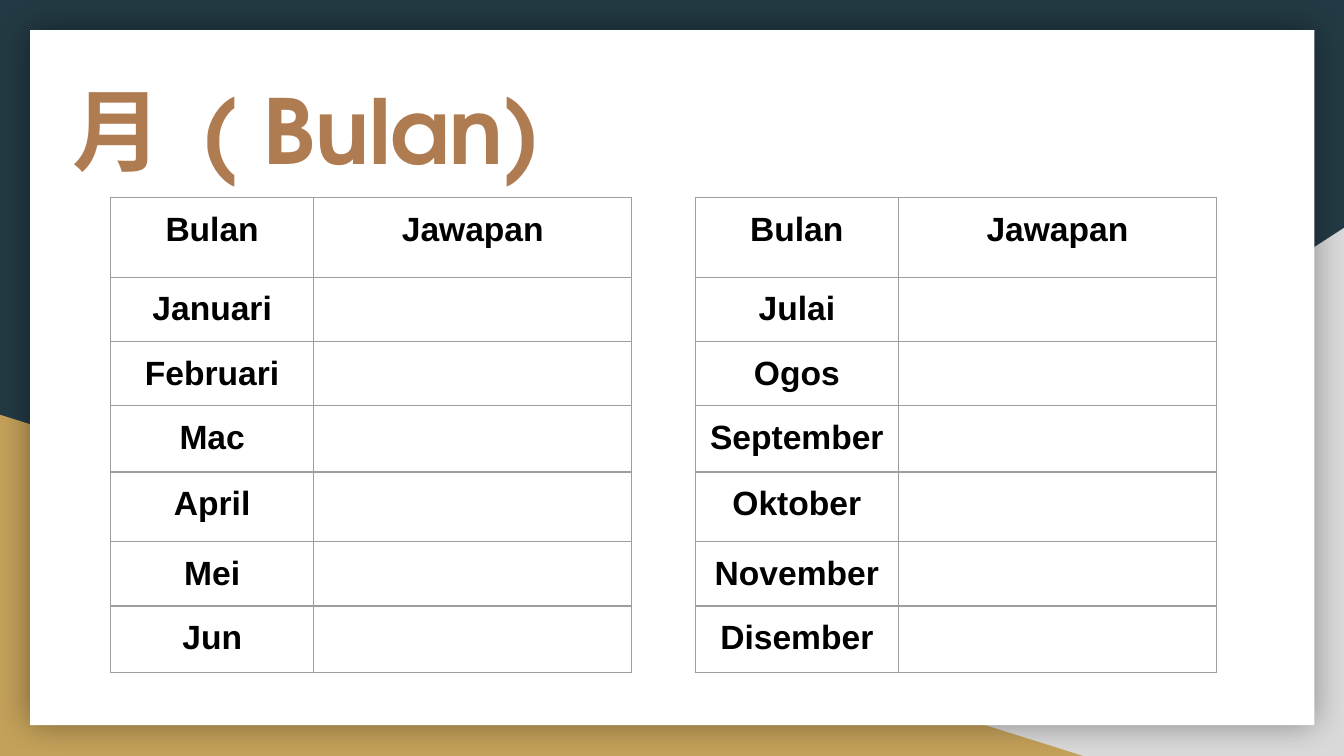
from lxml import etree
from pptx import Presentation
from pptx.dml.color import RGBColor
from pptx.enum.shapes import MSO_SHAPE as Shape
from pptx.enum.text import MSO_ANCHOR as Anchor, PP_ALIGN as Align
from pptx.oxml import parse_xml
from pptx.oxml.ns import nsdecls, qn
from pptx.util import Cm, Pt

# The second value is extra letter spacing in points
TITLE = [("月 ", 5), ("( Bulan)", 0)]
HEADER = ("Bulan", "Jawapan")
HALF_YEARS = [
    ("Januari", "Februari", "Mac", "April", "Mei", "Jun"),
    ("Julai", "Ogos", "September", "Oktober", "November", "Disember"),
]


class Theme:
    navy, gold, grey, white = "233A44", "C4A15A", "D9D9D9", "FFFFFF"
    title, text, border = "AF7B51", "000000", "9E9E9E"
    title_font, table_font = "TeX Gyre Adventor", "Arial"
    title_size, table_size = 48, 18
    border_width = 0.75


# Lengths in centimetres
SLIDE = (25.4, 14.29)
INSET = 0.25
TABLE_LEFT, TABLE_TOP, TABLE_STEP = 2.09, 3.73, 11.05
COLUMNS = (3.84, 6.01)
ROWS = (1.51, 1.21, 1.22, 1.25, 1.32, 1.21, 1.26)


def add_run(p, text, *, font, size, color, bold=True, spacing=0):
    p.alignment = Align.CENTER
    r = p.add_run()
    r.text = text
    r.font.name, r.font.size, r.font.bold = font, Pt(size), bold
    r.font.color.rgb = RGBColor.from_string(color)
    if spacing:
        r.font._element.set("spc", str(spacing * 100))


def set_insets(box):
    box.margin_left = box.margin_right = Cm(INSET)
    box.margin_top = box.margin_bottom = Cm(INSET)


def add_panel(slide, kind, box, color, flip=False):
    s = slide.shapes.add_shape(kind, *map(Cm, box))
    s.shadow.inherit = False
    s.fill.solid()
    s.fill.fore_color.rgb = RGBColor.from_string(color)
    s.line.fill.background()
    if flip:
        s._element.spPr.find(qn("a:xfrm")).set("flipH", "1")
    return s


def add_glow_shadow(s):
    """Give the shape a soft shadow that spreads evenly on all sides."""
    effects = s._element.spPr.find(qn("a:effectLst"))
    effects.append(parse_xml(
        f'<a:outerShdw {nsdecls("a")} blurRad="{Pt(18)}" dist="0" dir="0" algn="ctr" '
        'rotWithShape="0"><a:srgbClr val="000000"><a:alpha val="40000"/>'
        '</a:srgbClr></a:outerShdw>'))


def set_borders(cell):
    tcPr = cell._tc.get_or_add_tcPr()
    for side in ("a:lnL", "a:lnR", "a:lnT", "a:lnB"):
        ln = etree.SubElement(tcPr, qn(side), w=str(Pt(Theme.border_width)))
        fill = etree.SubElement(ln, qn("a:solidFill"))
        etree.SubElement(fill, qn("a:srgbClr"), val=Theme.border)


def add_month_table(slide, left, months):
    rows = [HEADER] + [(month, "") for month in months]
    frame = slide.shapes.add_table(len(ROWS), len(COLUMNS), Cm(left), Cm(TABLE_TOP),
                                   Cm(sum(COLUMNS)), Cm(sum(ROWS)))
    table = frame.table
    table.first_row = table.horz_banding = False
    for column, width in zip(table.columns, COLUMNS):
        column.width = Cm(width)
    for row, height, texts in zip(table.rows, ROWS, rows):
        row.height = Cm(height)
        for cell, text in zip(row.cells, texts):
            set_borders(cell)
            cell.fill.background()
            if text:
                set_insets(cell)
                add_run(cell.text_frame.paragraphs[0], text, font=Theme.table_font,
                        size=Theme.table_size, color=Theme.text)


def add_title(slide):
    s = slide.shapes.title
    s.left, s.top, s.width, s.height = map(Cm, (0.58, 0.56, 10.44, 3.76))
    tf = s.text_frame
    tf.word_wrap = True
    tf.vertical_anchor = Anchor.MIDDLE
    set_insets(tf)
    for text, spacing in TITLE:
        add_run(tf.paragraphs[0], text, font=Theme.title_font, size=Theme.title_size,
                color=Theme.title, spacing=spacing)
    # Bring the title in front of the background panels
    slide.shapes._spTree.append(s._element)


def main():
    prs = Presentation()
    prs.slide_width, prs.slide_height = map(Cm, SLIDE)
    slide = prs.slides.add_slide(prs.slide_layouts[5])
    slide.background.fill.solid()
    slide.background.fill.fore_color.rgb = RGBColor.from_string(Theme.navy)

    add_panel(slide, Shape.RIGHT_TRIANGLE, (9.96, 4.31, 15.44, 9.98), Theme.grey, flip=True)
    add_panel(slide, Shape.RIGHT_TRIANGLE, (0, 7.84, 20.47, 6.45), Theme.gold)
    add_glow_shadow(add_panel(slide, Shape.RECTANGLE, (0.57, 0.57, 24.27, 13.14), Theme.white))
    add_title(slide)
    for i, months in enumerate(HALF_YEARS):
        add_month_table(slide, TABLE_LEFT + i * TABLE_STEP, months)
    prs.save("out.pptx")


if __name__ == "__main__":
    main()
